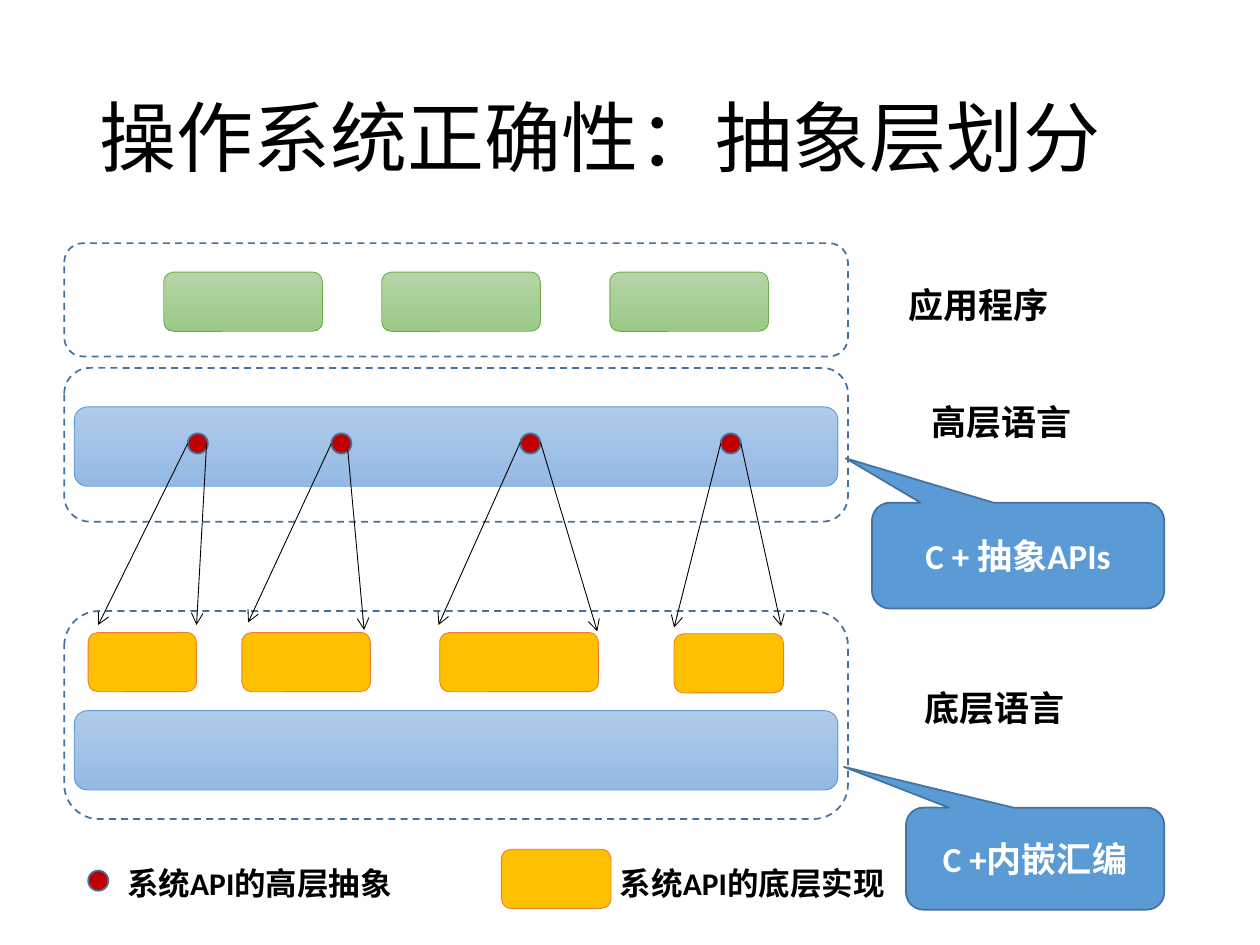
from lxml import etree
from pptx import Presentation
from pptx.dml.color import RGBColor
from pptx.enum import dml, shapes, text
from pptx.oxml import ns
from pptx.util import Inches, Pt

BLACK = RGBColor(0x00, 0x00, 0x00)
WHITE = RGBColor(0xFF, 0xFF, 0xFF)
NAVY = RGBColor(0x43, 0x73, 0x9E)
BLUE = RGBColor(0x5B, 0x9B, 0xD5)
BLUE_FADE = (RGBColor(0xB1, 0xCB, 0xE9), RGBColor(0x93, 0xB9, 0xE4))
GREEN = RGBColor(0x70, 0xAD, 0x47)
GREEN_FADE = (RGBColor(0xB5, 0xD5, 0xA7), RGBColor(0x9C, 0xC9, 0x87))
RED = RGBColor(0xC0, 0x00, 0x00)
AMBER = RGBColor(0xFF, 0xC0, 0x00)
ORANGE = RGBColor(0xED, 0x7D, 0x31)
LATIN, CHINESE = "Calibri", "Noto Sans CJK SC"

ROUND = shapes.MSO_SHAPE.ROUNDED_RECTANGLE
OVAL = shapes.MSO_SHAPE.OVAL
CALLOUT = shapes.MSO_SHAPE.ROUNDED_RECTANGULAR_CALLOUT
CENTER, LEFT = text.PP_ALIGN.CENTER, text.PP_ALIGN.LEFT

TITLE = "操作系统正确性：抽象层划分"
LAYERS = [(1.93, 0.9), (2.92, 1.22), (4.85, 1.65)]  # top, height
BAR_TOPS = [3.23, 5.64]
APP_LEFTS = [1.3, 3.03, 4.84]
DOT, BLOCK_HEIGHT = 0.16, 0.47
DOTS = [(1.49, 3.44), (2.63, 3.44), (4.13, 3.44), (5.72, 3.44), (0.7, 6.91)]
BLOCKS = [  # left, top, width; the last one belongs to the legend
    (0.7, 5.02, 0.86), (1.92, 5.02, 1.02), (3.49, 5.02, 1.26),
    (5.35, 5.03, 0.87), (3.98, 6.74, 0.87),
]
ARROWS = [  # from x, y, to x, y
    (1.49, 3.52, 0.78, 4.96), (1.64, 3.52, 1.56, 4.96),
    (2.63, 3.52, 1.97, 4.94), (2.76, 3.57, 2.89, 5.0),
    (4.13, 3.51, 3.48, 4.96), (4.29, 3.51, 4.74, 5.01),
    (5.72, 3.52, 5.35, 4.98), (5.88, 3.52, 6.2, 4.97),
]
LABELS = [  # text, place, size, alignment
    ("应用程序", (7.11, 2.2, 1.69, 0.44), 20, LEFT),
    ("高层语言", (6.79, 3.13, 2.32, 0.44), 20, CENTER),
    ("底层语言", (6.76, 5.4, 2.27, 0.44), 20, CENTER),
    ("系统API的高层抽象", (0.79, 6.81, 2.54, 0.4), 18, CENTER),
    ("系统API的底层实现", (4.77, 6.81, 2.4, 0.4), 18, CENTER),
]
CALLOUTS = [  # runs, place, pointer adjustments
    (["C + ", "抽象", "APIs"], (6.92, 3.99, 2.32, 0.84), (-0.59, -0.92, 0.17)),
    (["C +", "内嵌汇编"], (7.19, 6.41, 2.05, 0.81), (-0.74, -0.9, 0.17)),
]


def add_form(slide, kind, place, fill, line, width=1.0):
    """Add a preset shape; fill is a colour, a pair of colours or None."""
    form = slide.shapes.add_shape(kind, *map(Inches, place))
    form.shadow.inherit = False
    if fill is None:
        form.fill.background()
    elif isinstance(fill, RGBColor):
        form.fill.solid()
        form.fill.fore_color.rgb = fill
    else:
        form.fill.gradient()
        form.fill.gradient_angle = 270
        for stop, color in zip(form.fill.gradient_stops, fill):
            stop.color.rgb = color
    form.line.color.rgb = line
    form.line.width = Pt(width)
    return form


def write(frame, spans, size, color, align, bold=True):
    frame.word_wrap = True
    para = frame.paragraphs[0]
    para.alignment = align
    for words in spans:
        span = para.add_run()
        span.text = words
        span.font.size = Pt(size)
        span.font.bold = bold
        span.font.color.rgb = color
        span.font.name = LATIN
        east_asian = etree.SubElement(span.font._element, ns.qn("a:ea"))
        east_asian.set("typeface", CHINESE)
    return para


def add_arrow(slide, ends):
    arrow = slide.shapes.add_connector(
        shapes.MSO_CONNECTOR.STRAIGHT, *map(Inches, ends))
    arrow.line.color.rgb = BLACK
    arrow.line.width = Pt(0.5)
    tail = etree.SubElement(arrow.line._get_or_add_ln(), ns.qn("a:tailEnd"))
    tail.set("type", "arrow")
    etree.SubElement(arrow._element.spPr, ns.qn("a:effectLst"))


def main():
    deck = Presentation()
    deck.slide_width, deck.slide_height = Inches(10), Inches(7.5)
    slide = deck.slides.add_slide(deck.slide_layouts[6])

    title = slide.shapes.add_textbox(*map(Inches, (0.69, 0.4, 8.62, 1.45)))
    title.text_frame.vertical_anchor = text.MSO_ANCHOR.MIDDLE
    write(title.text_frame, [TITLE], 44, BLACK, LEFT, False).line_spacing = 0.9

    for top in BAR_TOPS:
        add_form(slide, ROUND, (0.59, top, 6.06, 0.63), BLUE_FADE, BLUE, 0.5)
    for left in APP_LEFTS:
        add_form(slide, ROUND, (left, 2.16, 1.26, BLOCK_HEIGHT),
                 GREEN_FADE, GREEN, 0.5)
    for left, top, width in BLOCKS:
        add_form(slide, ROUND, (left, top, width, BLOCK_HEIGHT),
                 AMBER, ORANGE, 0.5)
    for left, top in DOTS:
        add_form(slide, OVAL, (left, top, DOT, DOT), RED, NAVY)
    for top, height in LAYERS:
        layer = add_form(slide, ROUND, (0.51, top, 6.22, height), None, NAVY)
        layer.line.dash_style = dml.MSO_LINE.DASH
    for ends in ARROWS:
        add_arrow(slide, ends)

    for words, place, size, align in LABELS:
        label = slide.shapes.add_textbox(*map(Inches, place))
        write(label.text_frame, [words], size, BLACK, align)
    for spans, place, adjustments in CALLOUTS:
        callout = add_form(slide, CALLOUT, place, BLUE, NAVY)
        for index, value in enumerate(adjustments):
            callout.adjustments[index] = value
        callout.text_frame.vertical_anchor = text.MSO_ANCHOR.MIDDLE
        write(callout.text_frame, spans, 20, WHITE, CENTER)

    deck.save("out.pptx")


if __name__ == "__main__":
    main()
